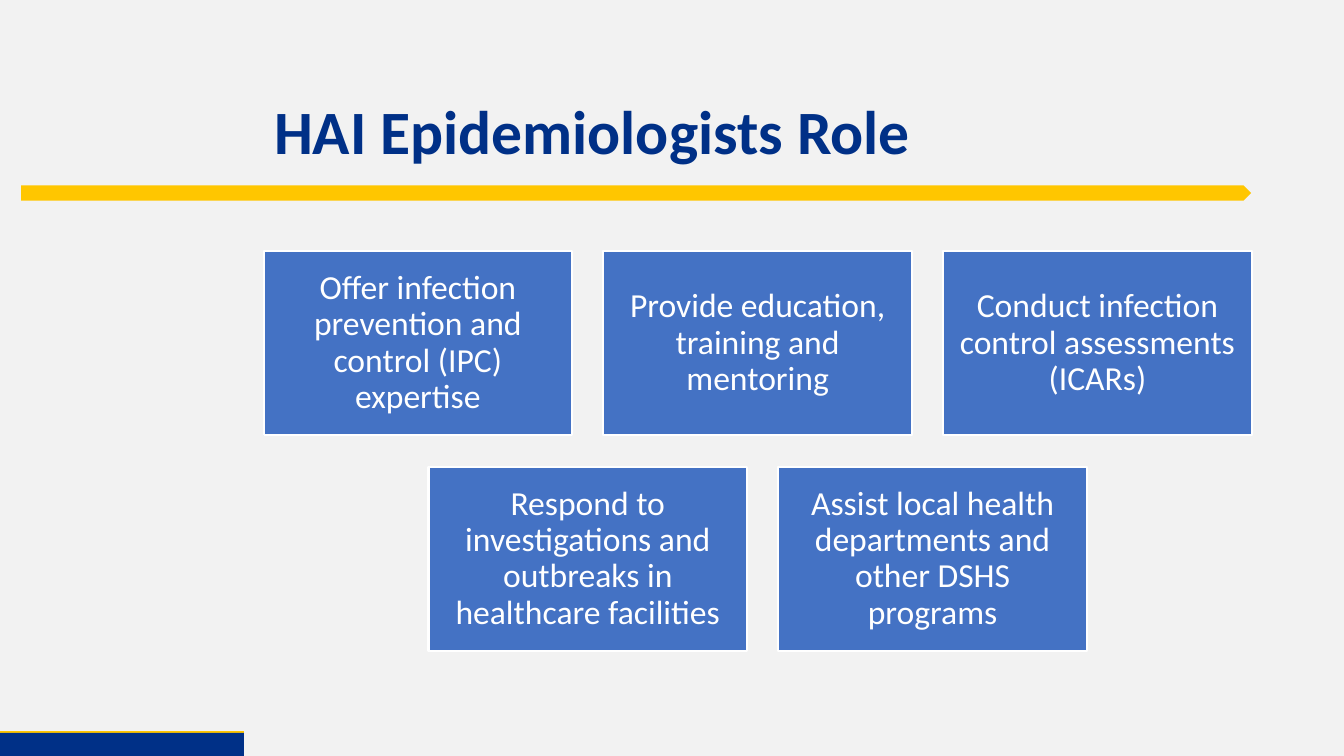
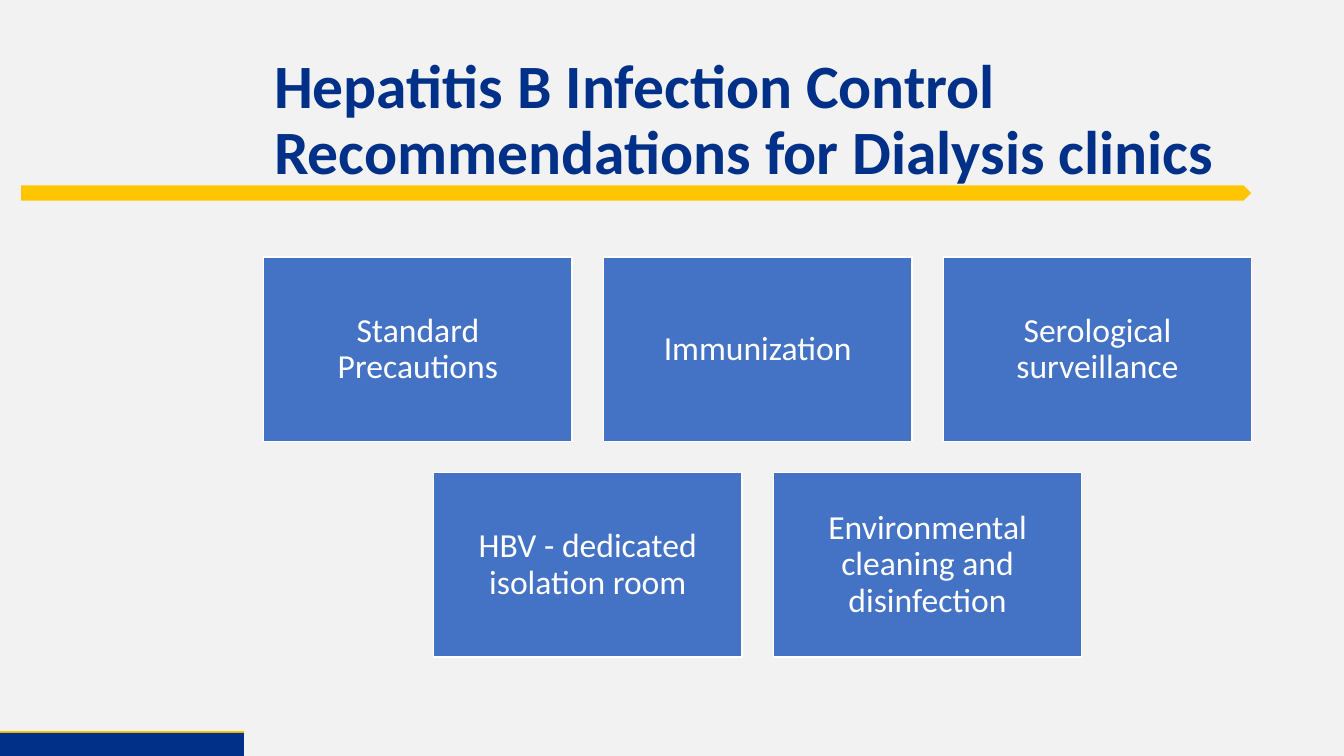
from lxml import etree
from pptx import Presentation
from pptx.dml.color import RGBColor
from pptx.enum.shapes import MSO_CONNECTOR, MSO_SHAPE
from pptx.enum.text import MSO_ANCHOR, PP_ALIGN
from pptx.oxml.ns import qn
from pptx.util import Inches, Pt

RECT, PENTAGON = MSO_SHAPE.RECTANGLE, MSO_SHAPE.PENTAGON
STRAIGHT = MSO_CONNECTOR.STRAIGHT
MIDDLE = MSO_ANCHOR.MIDDLE
LEFT, CENTER = PP_ALIGN.LEFT, PP_ALIGN.CENTER

GREY = RGBColor(0xF2, 0xF2, 0xF2)
GOLD = RGBColor(0xFF, 0xC6, 0x00)
NAVY = RGBColor(0x00, 0x30, 0x87)
BLUE = RGBColor(0x44, 0x72, 0xC4)
WHITE = RGBColor(0xFF, 0xFF, 0xFF)
FONT = "Calibri"

CONTENT_LEFT, CONTENT_WIDTH = 2.62, 9.79
FOOTER_TOP, FOOTER_WIDTH, FOOTER_HEIGHT = 7.27, 2.42, 0.23
BOX_WIDTH, BOX_HEIGHT, BOX_GAP = 3.06, 1.83, 0.31

ROLE_ROWS = [
    [("Offer infection prevention and control (IPC) expertise", BOX_WIDTH),
     ("Provide education, training and mentoring", BOX_WIDTH),
     ("Conduct infection control assessments (ICARs)", BOX_WIDTH)],
    [("Respond to investigations and outbreaks in healthcare facilities", 3.16),
     ("Assist local health departments and other DSHS programs", BOX_WIDTH)],
]
HEPATITIS_ROWS = [
    [("Standard Precautions", BOX_WIDTH),
     ("Immunization", BOX_WIDTH),
     ("Serological surveillance", BOX_WIDTH)],
    [("HBV - dedicated isolation room", BOX_WIDTH),
     ("Environmental cleaning and disinfection", BOX_WIDTH)],
]


def add_block(s, kind, left, top, width, height, fill):
    sp = s.shapes.add_shape(kind, Inches(left), Inches(top), Inches(width), Inches(height))
    sp.shadow.inherit = False
    sp.fill.solid()
    sp.fill.fore_color.rgb = fill
    sp.line.fill.background()
    return sp


def set_text(sp, text, size, color, align, bold=False):
    tf = sp.text_frame
    tf.word_wrap = True
    tf.vertical_anchor = MIDDLE
    tf.text = text
    p = tf.paragraphs[0]
    p.alignment = align
    p.line_spacing = 0.9
    font = p.runs[0].font
    font.name, font.size, font.bold = FONT, Pt(size), bold
    font.color.rgb = color


def add_footer_rule(s):
    rule = s.shapes.add_connector(STRAIGHT, 0, Inches(FOOTER_TOP),
                                  Inches(FOOTER_WIDTH), Inches(FOOTER_TOP))
    rule.line.color.rgb = GOLD
    rule.line.width = Pt(3)
    etree.SubElement(rule._element.spPr, qn("a:effectLst"))


def add_title(s, text, top):
    title = s.shapes.add_textbox(Inches(CONTENT_LEFT), Inches(top),
                                 Inches(CONTENT_WIDTH), Inches(1.45))
    set_text(title, text, 44, NAVY, LEFT, bold=True)


def add_box_rows(s, rows, top, border):
    """Stack rows of boxes, each row centred on the content area."""
    center = CONTENT_LEFT + CONTENT_WIDTH / 2
    for i, row in enumerate(rows):
        row_width = sum(width for _, width in row) + BOX_GAP * (len(row) - 1)
        left = center - row_width / 2
        for text, width in row:
            box = add_block(s, RECT, left, top + i * (BOX_HEIGHT + BOX_GAP),
                            width, BOX_HEIGHT, BLUE)
            box.line.color.rgb = WHITE
            box.line.width = Pt(border)
            set_text(box, text, 24, WHITE, CENTER)
            tf = box.text_frame
            tf.margin_left = tf.margin_right = Inches(0.1)
            tf.margin_top = tf.margin_bottom = Inches(0.1)
            left += width + BOX_GAP


def add_slide(prs, title, title_top, rows, rows_top, border):
    s = prs.slides.add_slide(prs.slide_layouts[6])
    s.background.fill.solid()
    s.background.fill.fore_color.rgb = GREY
    add_block(s, PENTAGON, 0.21, 1.84, 12.2, 0.15, GOLD)
    add_footer_rule(s)
    add_block(s, RECT, 0, FOOTER_TOP, FOOTER_WIDTH, FOOTER_HEIGHT, NAVY)
    add_title(s, title, title_top)
    add_box_rows(s, rows, rows_top, border)


def main():
    prs = Presentation()
    prs.slide_width, prs.slide_height = Inches(13.33), Inches(7.5)
    add_slide(prs, "HAI Epidemiologists Role", 0.61, ROLE_ROWS, 2.49, 1.5)
    add_slide(prs, "Hepatitis B Infection Control Recommendations for Dialysis clinics",
              0.48, HEPATITIS_ROWS, 2.55, 1)
    prs.save("out.pptx")


if __name__ == "__main__":
    main()
